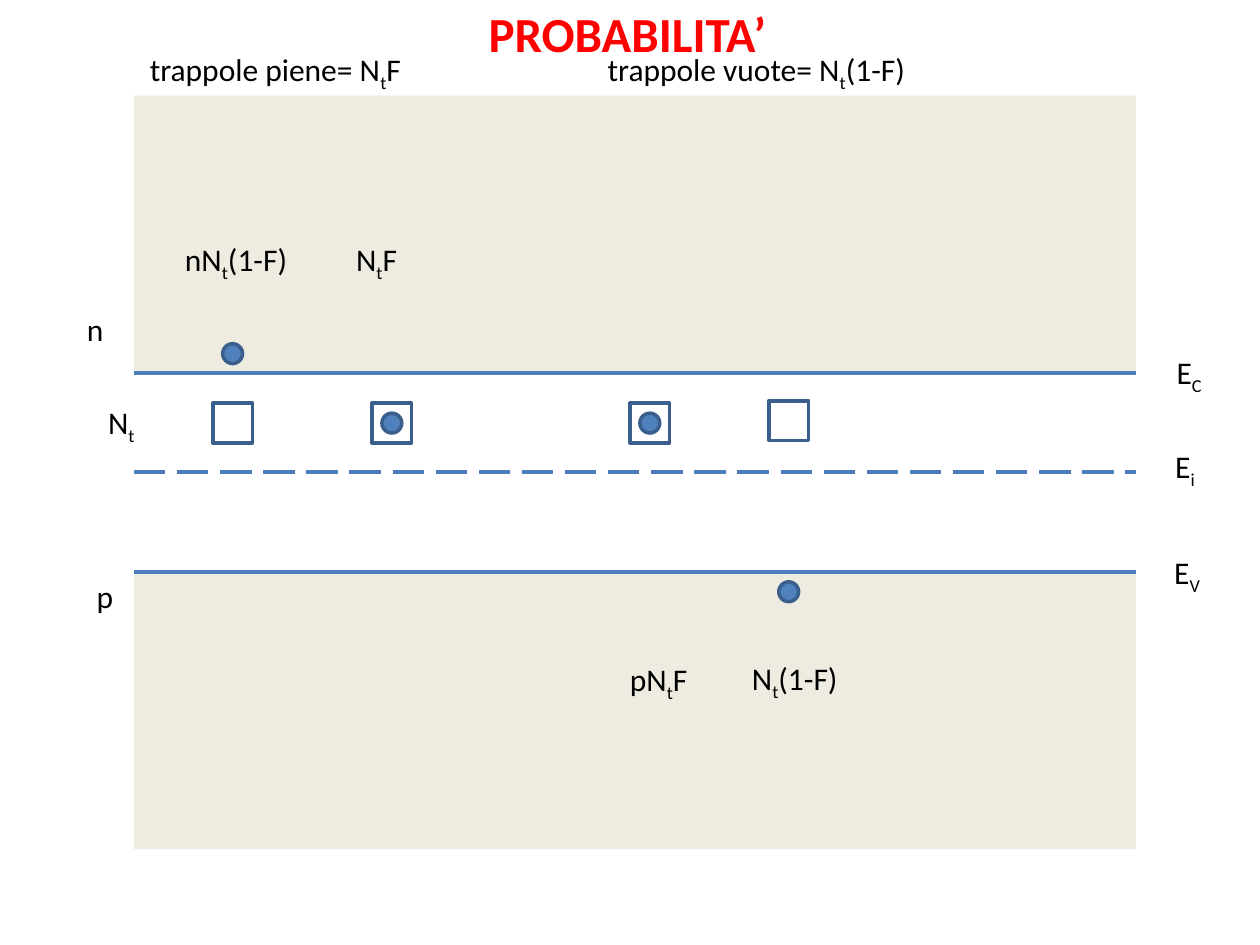
import pptx
import pptx.util
import pptx.dml.color
import pptx.enum.dml
import pptx.enum.shapes
import pptx.enum.text
import pptx.oxml.ns
import lxml.etree

Cm, Pt = pptx.util.Cm, pptx.util.Pt
MSO_SHAPE = pptx.enum.shapes.MSO_SHAPE


def paint(color_format, color):
    color_format.rgb = pptx.dml.color.RGBColor.from_string(color)


def add_shape(kind, left, top, width, height, fill=None, line=None):
    sp = s.shapes.add_shape(kind, Cm(left), Cm(top), Cm(width), Cm(height))
    sp.shadow.inherit = False
    if fill:
        sp.fill.solid()
        paint(sp.fill.fore_color, fill)
    else:
        sp.fill.background()
    if line:
        paint(sp.line.color, line)
        sp.line.width = Pt(2)
    else:
        sp.line.fill.background()


prs = pptx.Presentation()
prs.slide_width, prs.slide_height = Cm(25.4), Cm(19.05)
s = prs.slides.add_slide(prs.slide_layouts[6])

# Conduction and valence bands
band_left, band_width, band_height = 2.7, 20.2, 5.59
e_c, e_i, e_v = 7.52, 9.52, 11.53
for top in (e_c - band_height, e_v):
    add_shape(MSO_SHAPE.RECTANGLE, band_left, top, band_width, band_height, "EEECE1")

# Energy levels
for y, dash in ((e_c, None), (e_i, pptx.enum.dml.MSO_LINE.LONG_DASH), (e_v, None)):
    level = s.shapes.add_connector(pptx.enum.shapes.MSO_CONNECTOR.STRAIGHT,
                                   Cm(band_left), Cm(y), Cm(band_left + band_width), Cm(y))
    paint(level.line.color, "4B7EBC")
    level.line.width = Pt(2.25)
    level.line.dash_style = dash
    lxml.etree.SubElement(level._element.spPr, pptx.oxml.ns.qn("a:effectLst"))

# Traps, each with its carrier: trap left, trap top, carrier top
trap_size, carrier_size = 0.8, 0.4
for left, trap_top, carrier_top in (
    (4.29, 8.13, 6.93),
    (7.5, 8.13, 8.33),
    (12.7, 8.13, 8.33),
    (15.5, 8.08, 11.73),
):
    add_shape(MSO_SHAPE.RECTANGLE, left, trap_top, trap_size, trap_size, line="3A5F8C")
    add_shape(MSO_SHAPE.OVAL, left + (trap_size - carrier_size) / 2, carrier_top,
              carrier_size, carrier_size, "4F81BD", "3A5F8C")

# Labels: left, top, width, wrap, text parts (the second part is a subscript)
labels = (
    (1.5, 6.12, 0.86, False, ["n"]),
    (1.7, 11.51, 0.86, False, ["p"]),
    (1.93, 8, 1.07, False, ["N", "t"]),
    (23.47, 6.99, 1.04, False, ["E", "C"]),
    (23.42, 11.02, 1.07, False, ["E", "V"]),
    (23.44, 8.89, 0.91, False, ["E", "i"]),
    (2.77, 0.89, 6.2, True, ["trappole piene= N", "t", "F"]),
    (12, 0.89, 7, True, ["trappole vuote= N", "t", "(1-F)"]),
    (3.48, 4.72, 2.77, False, ["nN", "t", "(1-F)"]),
    (6.93, 4.72, 1.37, False, ["N", "t", "F"]),
    (12.45, 13.18, 1.7, False, ["pN", "t", "F"]),
    (14.91, 13.16, 2.29, False, ["N", "t", "(1-F)"]),
    (9.6, -0.05, 6.17, False, ["PROBABILITA’"]),
)
for left, top, width, wrap, parts in labels:
    title = parts[0] == "PROBABILITA’"
    tf = s.shapes.add_textbox(Cm(left), Cm(top), Cm(width), Cm(1.45 if title else 1.02)).text_frame
    tf.word_wrap = wrap
    tf.auto_size = pptx.enum.text.MSO_AUTO_SIZE.SHAPE_TO_FIT_TEXT
    p = tf.paragraphs[0]
    for i, part in enumerate(parts):
        r = p.add_run()
        r.text = part
        r.font.name = "Calibri"
        r.font.size = Pt(28 if title else 18)
        r.font.bold = title
        paint(r.font.color, "FF0000" if title else "000000")
        if i == 1:
            r._r.get_or_add_rPr().set("baseline", "-25000")

prs.save("out.pptx")
